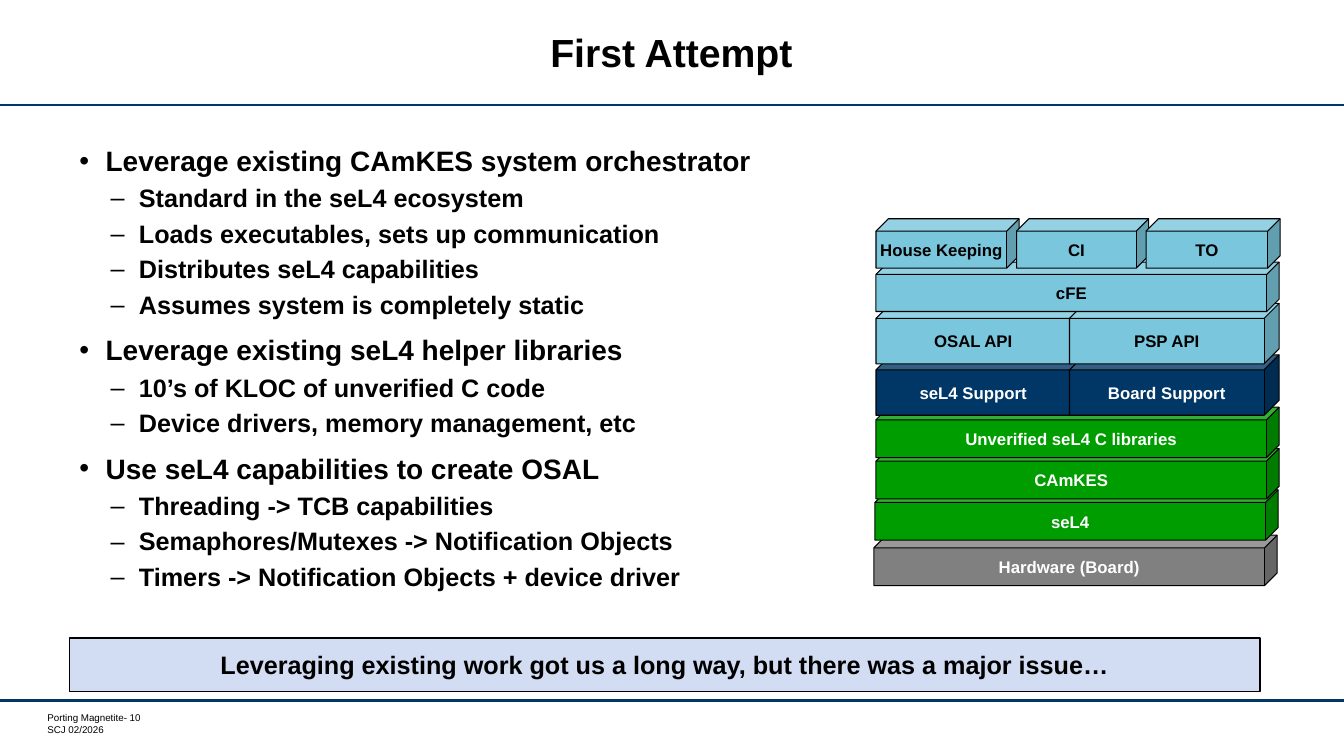
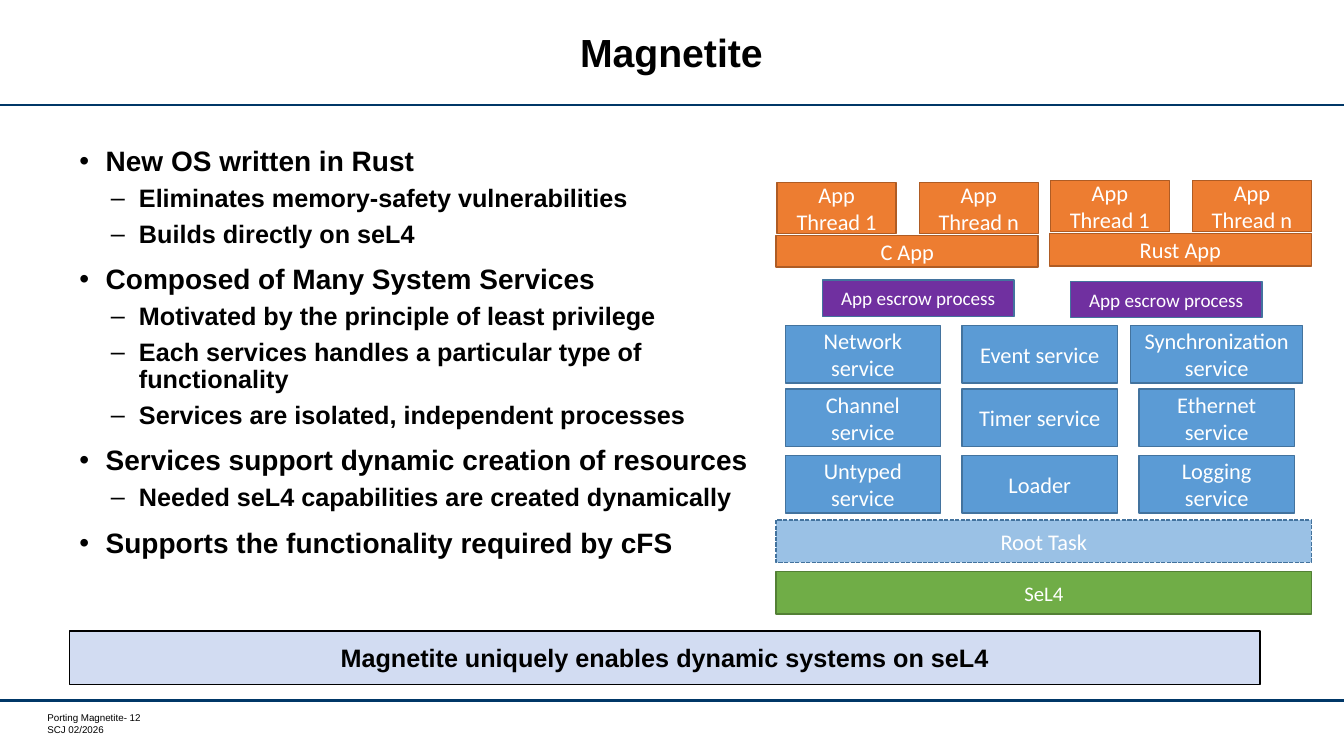
from dataclasses import dataclass

from lxml.etree import SubElement
from pptx import Presentation
from pptx.dml.color import RGBColor
from pptx.enum.dml import MSO_LINE
from pptx.enum.shapes import MSO_CONNECTOR, MSO_SHAPE
from pptx.enum.text import MSO_ANCHOR, MSO_AUTO_SIZE, PP_ALIGN
from pptx.oxml.ns import qn
from pptx.util import Inches, Pt

COLORS = {
    "navy": "003767", "black": "000000", "white": "FFFFFF", "banner": "D2DCF2",
    "gray": "808080", "kernel": "009D00", "sky": "7AC6DC",
    "app": "ED7D31", "app_edge": "AF5C24", "escrow": "7030A0",
    "service": "5B9BD5", "service_edge": "43739E",
    "sel4": "70AD47", "sel4_edge": "538035",
}
GRID = 0.1  # inches per column and per row
COLUMNS, ROWS = 133.33, 75
TITLE_ONLY = 5


@dataclass
class Box:
    """A region measured in grid columns and rows."""
    left: float
    top: float
    width: float
    height: float

    def inner(self, left, top, width, height):
        return Box(self.left + left, self.top + top, width, height)

    def emu(self):
        return [Inches(n * GRID) for n in (self.left, self.top, self.width, self.height)]


TITLE = Box(13.7, 1.1, 105.8, 8.9)
FOOTER = Box(4.7, 70.6, 15.9, 2.4)
RULE_ROWS = (10.4, 69.5)


def color(name):
    return RGBColor.from_string(COLORS[name])


def style(paragraph, size, ink="black", face="Arial", bold=False):
    font = paragraph.font
    font.name, font.size, font.bold = face, Pt(size), bold
    font.color.rgb = color(ink)


def block(slide, box, label, fill, edge, size, ink="white", face="Calibri",
          bold=False, weight=1, preset=MSO_SHAPE.RECTANGLE, wrap=True):
    """Draw a filled, outlined shape with one centred label."""
    shape = slide.shapes.add_shape(preset, *box.emu())
    shape.shadow.inherit = False
    shape.fill.solid()
    shape.fill.fore_color.rgb = color(fill)
    shape.line.color.rgb = color(edge)
    shape.line.width = Pt(weight)
    frame = shape.text_frame
    frame.word_wrap = wrap
    frame.vertical_anchor = MSO_ANCHOR.MIDDLE
    frame.text = label
    paragraph = frame.paragraphs[0]
    paragraph.alignment = PP_ALIGN.CENTER
    style(paragraph, size, ink, face, bold)
    return shape


def rule(slide, row):
    left, top, width, _ = Box(0, row, COLUMNS, 0).emu()
    line = slide.shapes.add_connector(MSO_CONNECTOR.STRAIGHT, left, top, left + width, top)
    line.line.color.rgb = color("navy")
    line.line.width = Pt(1.75)
    SubElement(line._element.spPr, qn("a:effectLst"))


def footer(slide, number):
    note = slide.shapes.add_textbox(*FOOTER.emu())
    frame = note.text_frame
    frame.word_wrap = True
    frame.margin_left = frame.margin_right = frame.margin_top = frame.margin_bottom = 0
    frame.text = f"Porting Magnetite- {number}\nSCJ 02/2026"
    for paragraph in frame.paragraphs:
        style(paragraph, 7)


def titled_slide(deck, heading, number):
    """Add a slide with the shared title, rules and footer."""
    slide = deck.slides.add_slide(deck.slide_layouts[TITLE_ONLY])
    for row in RULE_ROWS:
        rule(slide, row)
    footer(slide, number)
    title = slide.shapes.title
    title.left, title.top, title.width, title.height = TITLE.emu()
    frame = title.text_frame
    frame.text = heading
    frame.auto_size = MSO_AUTO_SIZE.NONE
    frame.vertical_anchor = MSO_ANCHOR.MIDDLE
    paragraph = frame.paragraphs[0]
    paragraph.alignment = PP_ALIGN.CENTER
    paragraph.line_spacing = Pt(28)
    style(paragraph, 28, bold=True)
    return slide


def outline(slide, box, topics):
    """Write each topic as a bullet, with its points as dashes below."""
    frame = slide.shapes.add_textbox(*box.emu()).text_frame
    frame.word_wrap = True
    lines = []
    for topic, points in topics:
        lines.append((0, topic))
        lines += [(1, point) for point in points]
    levels = (("•", 0.26, -0.26, 12, 20), ("–", 0.59, -0.28, 6, 18))
    for index, (level, text) in enumerate(lines):
        mark, margin, indent, before, size = levels[level]
        paragraph = frame.add_paragraph() if index else frame.paragraphs[0]
        paragraph.text = text
        paragraph.level = level
        paragraph.line_spacing = 0.9
        paragraph.space_before = Pt(before if index else 0)
        properties = paragraph._p.get_or_add_pPr()
        properties.set("marL", str(Inches(margin)))
        properties.set("indent", str(Inches(indent)))
        SubElement(properties, qn("a:buFont")).set("typeface", "Arial")
        SubElement(properties, qn("a:buChar")).set("char", mark)
        style(paragraph, size, bold=True)


def banner(slide, top, message):
    block(slide, Box(6.9, top, 118.1, 5.3), message, "banner", "black", 18,
          "black", "Arial", True)


def cube_stack(slide, box):
    """Stack rows of cubes from the hardware up to the applications."""
    whole, halves = (40,), (20.8, 20.8)
    layers = [  # shift, top, height, fill, ink, overlap, widths, labels
        (-0.2, 31.4, 5, "gray", "white", 0, whole, ["Hardware (Board)"]),
        (-0.1, 26.9, 5, "kernel", "white", 0, whole, ["seL4"]),
        (0, 22.8, 5, "kernel", "white", 0, whole, ["CAmKES"]),
        (0, 18.7, 5, "kernel", "white", 0, whole, ["Unverified seL4 C libraries"]),
        (0, 13.5, 6, "navy", "white", 1.6, halves, ["seL4 Support", "Board Support"]),
        (0, 8.4, 6, "sky", "black", 1.6, halves, ["OSAL API", "PSP API"]),
        (0, 4.3, 4.9, "sky", "black", 0, whole, ["cFE"]),
        (0, 0, 4.9, "sky", "black", 0.25, (14.2, 13.1, 13.3),
         ["House Keeping", "CI", "TO"]),
    ]
    for left, top, height, fill, ink, overlap, widths, labels in layers:
        for width, label in zip(widths, labels):
            block(slide, box.inner(left, top, width, height), label, fill, "black", 12,
                  ink, "Arial", True, 0.75, MSO_SHAPE.CUBE, False)
            left += width - overlap


def app_group(slide, box, name):
    """Place two threads on top of the app that owns them."""
    base = 5.25
    block(slide, box.inner(0, base, box.width, box.height - base), name, "app", "app_edge", 16)
    for left, thread in ((0.1, "1"), (14.2, "n")):
        block(slide, box.inner(left, 0, 11.8, 5.1), f"App Thread {thread}",
              "app", "app_edge", 16)


def service_grid(slide, box):
    services = (
        ("Network service", "Event service", "Synchronization service"),
        ("Channel service", "Timer service", "Ethernet service"),
        ("Untyped service", "Loader", "Logging service"),
    )
    pitch, usual, wide = 17.55, 15.4, 17.1
    for top, names in zip((0, 6.3, 12.9), services):
        for column, name in enumerate(names):
            width = wide if name.startswith("Synchronization") else usual
            left = column * pitch + (usual - width) / 2
            block(slide, box.inner(left, top, width, 5.7), name,
                  "service", "service_edge", 16)


def magnetite_diagram(slide, box):
    app_group(slide, box.inner(0, 0.2, 26, 8.4), "C App")
    app_group(slide, box.inner(27.1, 0, 26, 8.5), "Rust App")
    for left, top in ((4.6, 9.9), (29.2, 10)):
        block(slide, box.inner(left, top, 19, 3.6), "App escrow process",
              "escrow", "service_edge", 13.7)
    service_grid(slide, box.inner(0.9, 14.4, 50.5, 18.6))
    root = block(slide, box.inner(0, 33.7, box.width, 4.2), "Root Task",
                 "service", "service_edge", 16)
    root.line.dash_style = MSO_LINE.SQUARE_DOT
    fill = root._element.spPr.find(qn("a:solidFill"))
    SubElement(fill[0], qn("a:alpha")).set("val", "61000")
    block(slide, box.inner(0, 38.8, box.width, 4.2), "SeL4", "sel4", "sel4_edge", 14.8)


def first_attempt(deck):
    slide = titled_slide(deck, "First Attempt", 10)
    outline(slide, Box(6.9, 14.1, 76.3, 48.7), [
        ("Leverage existing CAmKES system orchestrator", [
            "Standard in the seL4 ecosystem",
            "Loads executables, sets up communication",
            "Distributes seL4 capabilities",
            "Assumes system is completely static"]),
        ("Leverage existing seL4 helper libraries", [
            "10’s of KLOC of unverified C code",
            "Device drivers, memory management, etc"]),
        ("Use seL4 capabilities to create OSAL", [
            "Threading -> TCB capabilities",
            "Semaphores/Mutexes -> Notification Objects",
            "Timers -> Notification Objects + device driver"]),
    ])
    cube_stack(slide, Box(86.9, 21.7, 40, 36.4))
    banner(slide, 63.3,
           "Leveraging existing work got us a long way, but there was a major issue…")


def magnetite(deck):
    slide = titled_slide(deck, "Magnetite", 12)
    outline(slide, Box(6.9, 14.1, 70.1, 44.7), [
        ("New OS written in Rust", [
            "Eliminates memory-safety vulnerabilities",
            "Builds directly on seL4"]),
        ("Composed of Many System Services", [
            "Motivated by the principle of least privilege",
            "Each services handles a particular type of functionality",
            "Services are isolated, independent processes"]),
        ("Services support dynamic creation of resources", [
            "Needed seL4 capabilities are created dynamically"]),
        ("Supports the functionality required by cFS", []),
    ])
    magnetite_diagram(slide, Box(77, 17.9, 53.1, 43))
    banner(slide, 62.6, "Magnetite uniquely enables dynamic systems on seL4")


def main():
    deck = Presentation()
    deck.slide_width = Inches(COLUMNS * GRID)
    deck.slide_height = Inches(ROWS * GRID)
    first_attempt(deck)
    magnetite(deck)
    deck.save("out.pptx")


if __name__ == "__main__":
    main()
